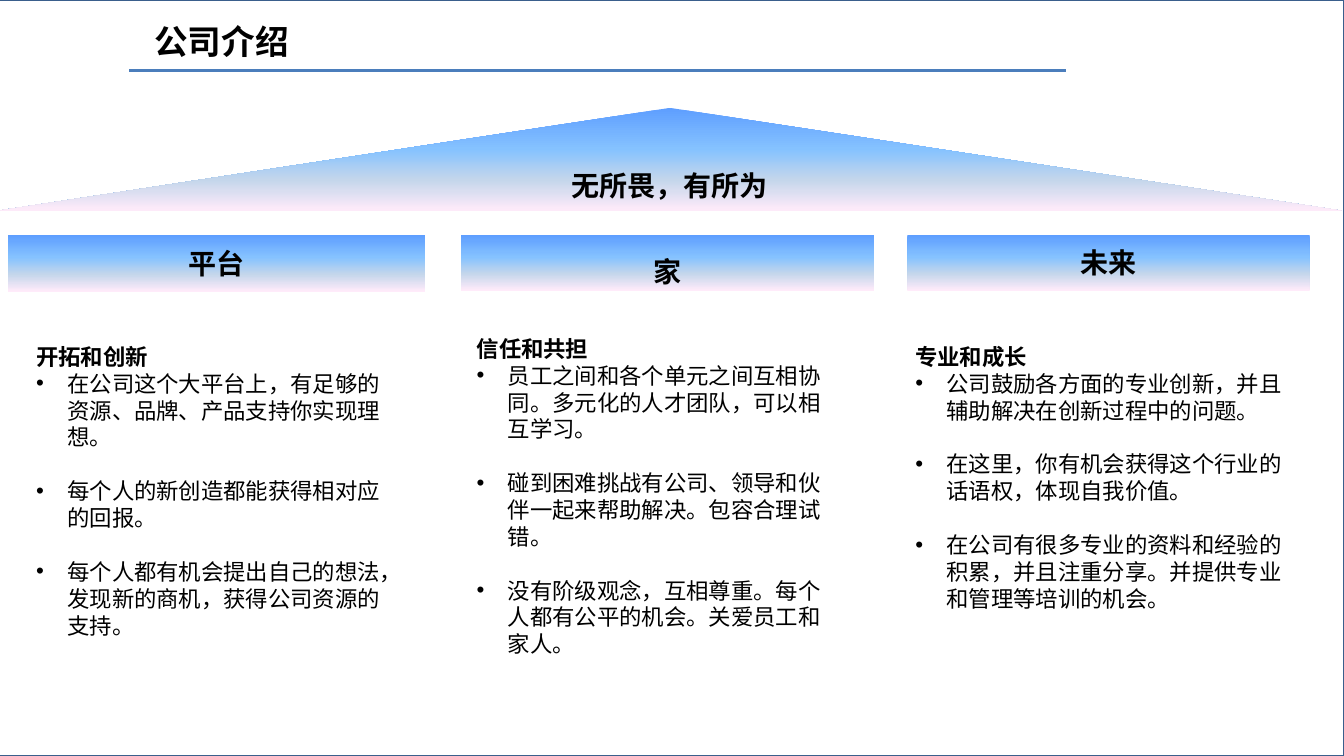
import copy

from lxml import etree
from pptx import Presentation
from pptx.dml.color import RGBColor
from pptx.enum import shapes, text
from pptx.oxml.ns import qn
from pptx.util import Inches, Pt

FONT = "Noto Sans CJK SC"
BLACK = RGBColor(0x00, 0x00, 0x00)
FRAME_BLUE = RGBColor(0x3A, 0x5F, 0x8C)
RULE_BLUE = RGBColor(0x4B, 0x7E, 0xBC)
SKY_TO_PINK = [
    (0, RGBColor(0x5E, 0x9E, 0xFF)),
    (0.4, RGBColor(0x85, 0xC2, 0xFF)),
    (0.7, RGBColor(0xC4, 0xD6, 0xEB)),
    (1, RGBColor(0xFF, 0xEB, 0xFA)),
]
BODY_LINE = Pt(19.2)
INDENT = Inches(0.31)

# Pillar name, its bar (left, width, height) and line spacing
PILLARS = [
    ("平台", (0.08, 4.14, 0.56), 1),
    ("家", (4.57, 4.1, 0.55), 1.5),
    ("未来", (9, 3.99, 0.55), 1),
]

# Heading, its box (left, top, width, height) and points
VALUES = [
    ("开拓和创新", (0.26, 3.22, 3.78, 3.2), [
        "在公司这个大平台上，有足够的资源、品牌、产品支持你实现理想。",
        "每个人的新创造都能获得相对应的回报。",
        "每个人都有机会提出自己的想法，发现新的商机，获得公司资源的支持。",
    ]),
    ("信任和共担", (4.63, 3.14, 3.67, 4.06), [
        "员工之间和各个单元之间互相协同。多元化的人才团队，可以相互学习。",
        "碰到困难挑战有公司、领导和伙伴一起来帮助解决。包容合理试错。",
        "没有阶级观念，互相尊重。每个人都有公平的机会。关爱员工和家人。",
    ]),
    ("专业和成长", (8.98, 3.22, 4.04, 2.98), [
        "公司鼓励各方面的专业创新，并且辅助解决在创新过程中的问题。",
        "在这里，你有机会获得这个行业的话语权，体现自我价值。",
        "在公司有很多专业的资料和经验的积累，并且注重分享。并提供专业和管理等培训的机会。",
    ]),
]


def inches(*lengths):
    return [Inches(length) for length in lengths]


def write(paragraph, words, size, bold=True):
    """Fill a paragraph, naming the font for Latin and East Asian text."""
    run = paragraph.add_run()
    run.text = words
    font = paragraph.font
    font.name, font.size, font.bold = FONT, Pt(size), bold
    font.color.rgb = BLACK
    for properties in (font._element, run.font._element):
        east_asian = etree.SubElement(properties, qn("a:ea"))
        east_asian.set("typeface", FONT)
    run.font.name, run.font.size, run.font.bold = FONT, Pt(size), bold
    run.font.color.rgb = BLACK


def add_title(slide, words):
    title = slide.shapes.title
    title.left, title.top, title.width, title.height = inches(1.43, 0.16, 2.42, 0.5)
    frame = title.text_frame
    frame.auto_size = text.MSO_AUTO_SIZE.NONE
    frame.vertical_anchor = text.MSO_ANCHOR.MIDDLE
    frame.paragraphs[0].alignment = text.PP_ALIGN.LEFT
    write(frame.paragraphs[0], words, 24)


def add_frame(slide):
    frame = slide.shapes.add_shape(
        shapes.MSO_SHAPE.RECTANGLE, *inches(-0.02, 0, 13.35, 7.5))
    frame.shadow.inherit = False
    frame.fill.background()
    frame.line.color.rgb = FRAME_BLUE
    frame.line.width = Pt(2)


def add_title_rule(slide):
    rule = slide.shapes.add_connector(
        shapes.MSO_CONNECTOR.STRAIGHT, *inches(1.28, 0.7, 10.57, 0.7))
    rule.line.color.rgb = RULE_BLUE
    rule.line.width = Pt(2)
    etree.SubElement(rule._element.spPr, qn("a:effectLst"))


def fill_with_gradient(shape):
    shape.fill.gradient()
    shape.fill.gradient_angle = 270
    stop_list = shape._element.spPr.find(".//" + qn("a:gsLst"))
    while len(stop_list) < len(SKY_TO_PINK):
        stop_list.append(copy.deepcopy(stop_list[0]))
    for stop, (position, color) in zip(shape.fill.gradient_stops, SKY_TO_PINK):
        stop.position = position
        stop.color.rgb = color


def add_gradient_label(slide, preset, box, words, spacing=1):
    label = slide.shapes.add_shape(preset, *inches(*box))
    label.shadow.inherit = False
    label.line.fill.background()
    fill_with_gradient(label)
    label.text_frame.vertical_anchor = text.MSO_ANCHOR.MIDDLE
    paragraph = label.text_frame.paragraphs[0]
    paragraph.alignment = text.PP_ALIGN.CENTER
    paragraph.line_spacing = spacing
    write(paragraph, words, 20)


def add_bullet(paragraph):
    properties = paragraph._element.get_or_add_pPr()
    properties.set("marL", str(INDENT))
    properties.set("indent", str(-INDENT))
    typeface = etree.SubElement(properties, qn("a:buFont"))
    typeface.set("typeface", "Arial")
    etree.SubElement(properties, qn("a:buChar")).set("char", "•")


def add_value(slide, heading, box, points):
    frame = slide.shapes.add_textbox(*inches(*box)).text_frame
    frame.word_wrap = True
    first = frame.paragraphs[0]
    first.line_spacing = Pt(28.8)
    write(first, heading, 16)
    for number, point in enumerate(points):
        paragraph = frame.add_paragraph()
        paragraph.line_spacing = BODY_LINE
        paragraph.space_before = BODY_LINE if number else Pt(0)
        add_bullet(paragraph)
        write(paragraph, point, 16, bold=False)


def main():
    deck = Presentation()
    deck.slide_width, deck.slide_height = inches(13.33, 7.5)
    slide = deck.slides.add_slide(deck.slide_layouts[5])
    add_title(slide, "公司介绍")
    add_frame(slide)
    add_title_rule(slide)
    add_gradient_label(slide, shapes.MSO_SHAPE.ISOSCELES_TRIANGLE,
                       (-0.02, 1.07, 13.33, 1.02), "无所畏，有所为")
    for name, (left, width, height), spacing in PILLARS:
        add_gradient_label(slide, shapes.MSO_SHAPE.RECTANGLE,
                           (left, 2.33, width, height), name, spacing)
    for heading, box, points in VALUES:
        add_value(slide, heading, box, points)
    deck.save("out.pptx")


if __name__ == "__main__":
    main()
